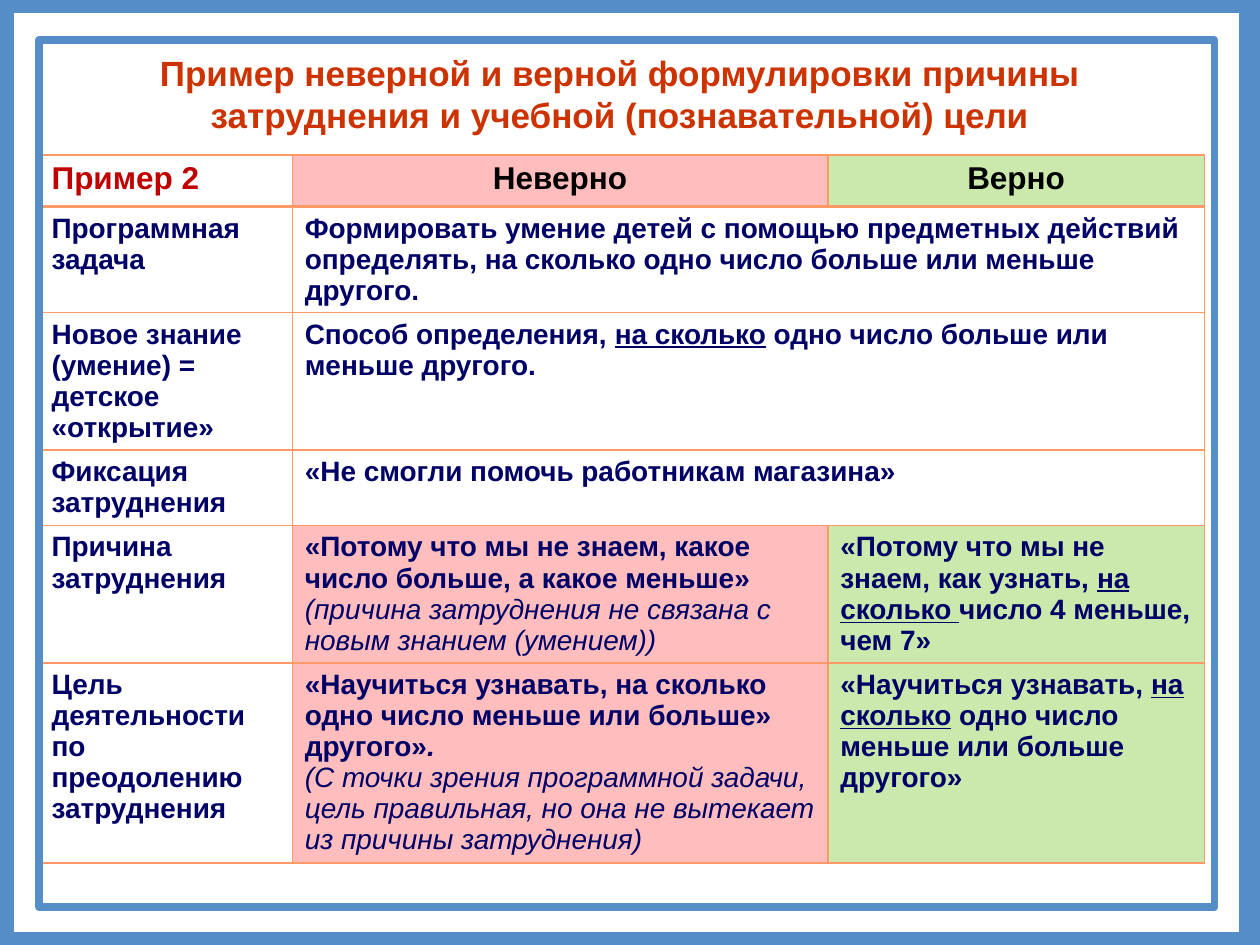
import pptx
import pptx.dml.color
import pptx.enum.shapes
import pptx.enum.text
import pptx.oxml
import pptx.oxml.ns
import pptx.util

Inches = pptx.util.Inches
ALIGN = pptx.enum.text.PP_ALIGN

THEME = {
    "font": "Arial",
    "title_size": 20, "header_size": 18, "body_size": 16,
    "title": "CC3300", "example": "C00000", "header": "000000", "body": "000066",
    "frame": "558EC7", "border": "FF9966",
    "wrong": "FFBDBD", "right": "CCE9AD",
}

FORMATS = {
    "bold": {"bold": True, "italic": False, "underline": False},
    "underlined": {"bold": True, "italic": False, "underline": True},
    "bold italic": {"bold": True, "italic": True, "underline": False},
    "italic": {"bold": False, "italic": True, "underline": False},
}

TITLE = "Пример неверной и верной формулировки причины затруднения и учебной (познавательной) цели"
HEADERS = [
    ("Пример 2", "example", ALIGN.LEFT),
    ("Неверно", "header", ALIGN.CENTER),
    ("Верно", "header", ALIGN.CENTER),
]

# Each row holds cells, each cell paragraphs, each paragraph (text, format) runs.
# A row of two cells spreads the second over the last two columns.
ROWS = [
    [
        [[("Программная задача", "bold")]],
        [[("Формировать умение детей с помощью предметных действий определять, "
           "на сколько одно число больше или меньше другого.", "bold")]],
    ],
    [
        [[("Новое знание (умение) = детское «открытие»", "bold")]],
        [[("Способ определения, ", "bold"), ("на сколько", "underlined"),
          (" одно число больше или меньше другого.", "bold")]],
    ],
    [
        [[("Фиксация затруднения", "bold")]],
        [[("«Не смогли помочь работникам магазина»", "bold")]],
    ],
    [
        [[("Причина затруднения", "bold")]],
        [[("«Потому что мы не знаем, какое число больше, а какое меньше»", "bold")],
         [("(причина затруднения не связана с новым знанием (умением))", "italic")]],
        [[("«Потому что мы не знаем, как узнать, ", "bold"), ("на сколько ", "underlined"),
          ("число 4 меньше, чем 7»", "bold")]],
    ],
    [
        [[("Цель деятельности по преодолению затруднения", "bold")]],
        [[("«Научиться узнавать, на сколько одно число меньше или больше» другого»", "bold"),
          (".", "bold italic")],
         [("(С точки зрения программной задачи, цель правильная, "
           "но она не вытекает из причины затруднения)", "italic")]],
        [[("«Научиться узнавать, ", "bold"), ("на сколько", "underlined"),
          (" одно число меньше или больше другого»", "bold")]],
    ],
]

COLUMN_WIDTHS = [2.01, 4.25, 2.99]
ROW_HEIGHTS = [0.41, 0.83, 1.09, 0.6, 1.09, 1.59]
COLUMN_FILLS = [None, "wrong", "right"]
TABLE_LEFT, TABLE_TOP = 0.31, 1.23
FRAMES = [((0.01, 0, 9.93, 7.5), 15), ((0.31, 0.32, 9.33, 6.88), 4.5)]
TITLE_BOX = (0.43, 0.36, 8.98, 0.77)


def color(name):
    return pptx.dml.color.RGBColor.from_string(THEME[name])


def write_text(text_frame, paragraphs, size, color_name, alignment=ALIGN.LEFT):
    text_frame.word_wrap = True
    for index, runs in enumerate(paragraphs):
        paragraph = text_frame.add_paragraph() if index else text_frame.paragraphs[0]
        paragraph.alignment = alignment
        for text, format_name in runs:
            run = paragraph.add_run()
            run.text = text
            values = {"name": THEME["font"], "size": pptx.util.Pt(THEME[size]),
                      **FORMATS[format_name]}
            for attribute, value in values.items():
                setattr(run.font, attribute, value)
            run.font.color.rgb = color(color_name)


def style_cell(cell, fill_name, bottom_width, top_width):
    if fill_name:
        cell.fill.solid()
        cell.fill.fore_color.rgb = color(fill_name)
    else:
        cell.fill.background()
    properties = cell._tc.get_or_add_tcPr()
    widths = {"lnL": 1, "lnR": 1, "lnT": top_width, "lnB": bottom_width}
    for position, (side, width) in enumerate(widths.items()):
        line = pptx.oxml.parse_xml(
            f'<a:{side} {pptx.oxml.ns.nsdecls("a")} w="{pptx.util.Pt(width)}">'
            f'<a:solidFill><a:srgbClr val="{THEME["border"]}"/></a:solidFill></a:{side}>')
        properties.insert(position, line)


def add_table(slide):
    table = slide.shapes.add_table(
        len(ROW_HEIGHTS), len(COLUMN_WIDTHS), Inches(TABLE_LEFT), Inches(TABLE_TOP),
        Inches(sum(COLUMN_WIDTHS)), Inches(sum(ROW_HEIGHTS))).table
    table.first_row = table.horz_banding = False
    for column, width in zip(table.columns, COLUMN_WIDTHS):
        column.width = Inches(width)
    for row, height in zip(table.rows, ROW_HEIGHTS):
        row.height = Inches(height)

    for column, (text, color_name, alignment) in enumerate(HEADERS):
        cell = table.cell(0, column)
        write_text(cell.text_frame, [[(text, "bold")]], "header_size", color_name, alignment)
        style_cell(cell, COLUMN_FILLS[column], 2, 1)

    for row, cells in enumerate(ROWS, start=1):
        spans = len(cells) < len(COLUMN_WIDTHS)
        for column, fill_name in enumerate(COLUMN_FILLS):
            style_cell(table.cell(row, column), None if spans else fill_name,
                       1, 2 if row == 1 else 1)
        if spans:
            table.cell(row, 1).merge(table.cell(row, 2))
        for column, paragraphs in enumerate(cells):
            write_text(table.cell(row, column).text_frame, paragraphs, "body_size", "body")


def add_frames(slide):
    group = slide.shapes.add_group_shape()
    for box, line_width in FRAMES:
        frame = group.shapes.add_shape(
            pptx.enum.shapes.MSO_SHAPE.RECTANGLE, *map(Inches, box))
        frame.shadow.inherit = False
        frame.fill.background()
        frame.line.color.rgb = color("frame")
        frame.line.width = pptx.util.Pt(line_width)


def add_title(slide):
    text_frame = slide.shapes.add_textbox(*map(Inches, TITLE_BOX)).text_frame
    write_text(text_frame, [[(TITLE, "bold")]], "title_size", "title", ALIGN.CENTER)
    text_frame.auto_size = pptx.enum.text.MSO_AUTO_SIZE.SHAPE_TO_FIT_TEXT


def main():
    presentation = pptx.Presentation()
    presentation.slide_width, presentation.slide_height = Inches(10), Inches(7.5)
    slide = presentation.slides.add_slide(presentation.slide_layouts[6])
    add_table(slide)
    add_frames(slide)
    add_title(slide)
    presentation.save("out.pptx")


if __name__ == "__main__":
    main()
